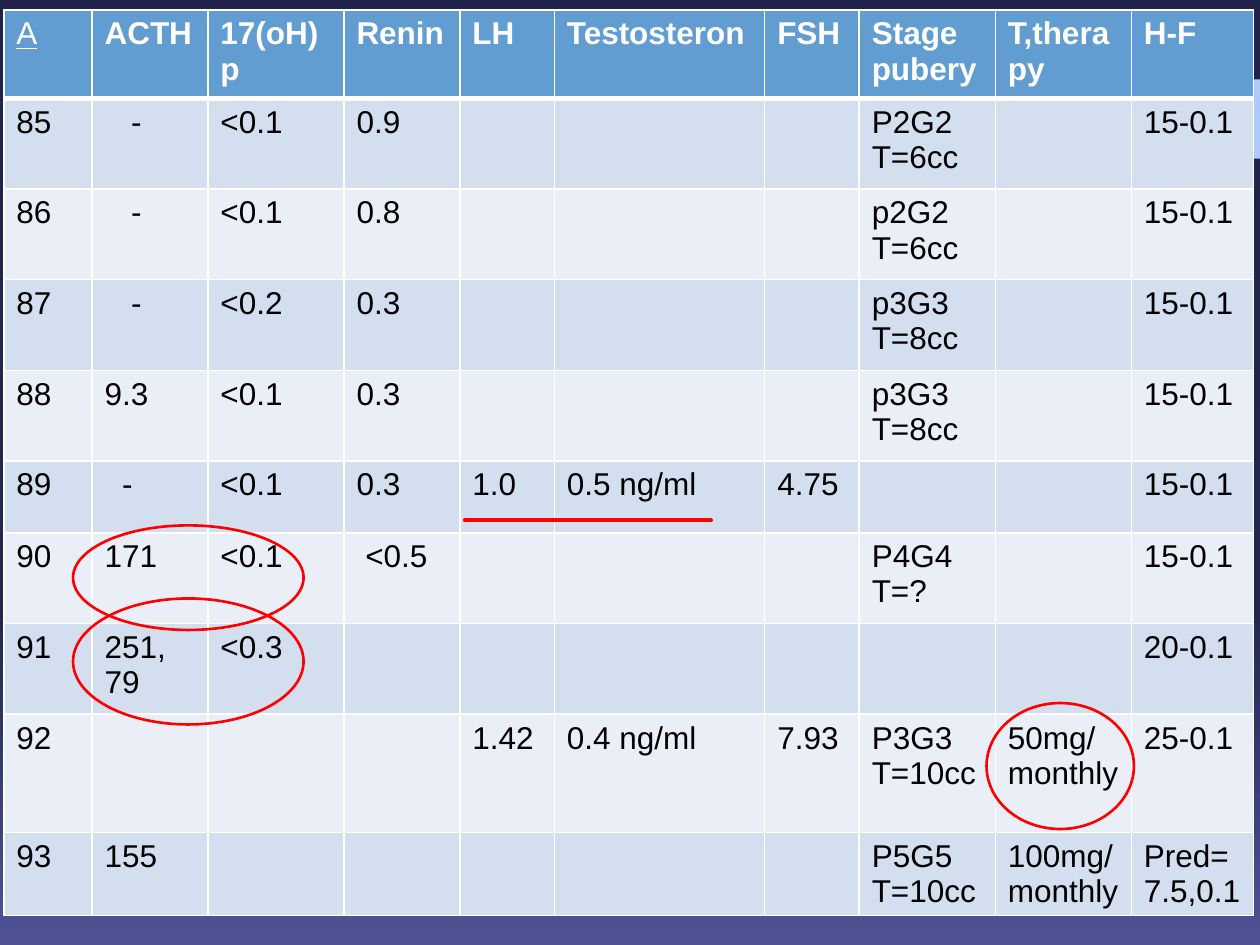
from copy import deepcopy

from lxml.etree import SubElement
from pptx import Presentation
from pptx.dml.color import RGBColor
from pptx.enum.shapes import MSO_SHAPE
from pptx.oxml.ns import qn
from pptx.util import Inches, Pt

FONT = "Arial"
WHITE, BLACK, RED = "FFFFFF", "000000", "FF0000"
HEADER_BLUE, BAND_DARK, BAND_LIGHT = "629DD1", "D3DFEE", "EAEFF7"
ACCENT = "ACCBF9"
BACKGROUND_STOPS = [(0, "21244A"), (0.65, "232750"), (1, "4F5395")]

COLUMN_WIDTHS = [0.7, 0.92, 1.08, 0.92, 0.75, 1.67, 0.75, 1.08, 1.08, 0.97]
ROW_HEIGHTS = [0.7, 0.72, 0.72, 0.72, 0.72, 0.57, 0.72, 0.72, 0.94, 0.66]
LAB_RESULTS = [
    ["A", "ACTH", "17(oH)p", "Renin", "LH", "Testosteron", "FSH", "Stage\npubery", "T,therapy", "H-F"],
    ["85", "-", "<0.1", "0.9", "", "", "", "P2G2\nT=6cc", "", "15-0.1"],
    ["86", "-", "<0.1", "0.8", "", "", "", "p2G2\nT=6cc", "", "15-0.1"],
    ["87", "-", "<0.2", "0.3", "", "", "", "p3G3\nT=8cc", "", "15-0.1"],
    ["88", "9.3", "<0.1", "0.3", "", "", "", "p3G3\nT=8cc", "", "15-0.1"],
    ["89", "-", "<0.1", "0.3", "1.0", "0.5 ng/ml", "4.75", "", "", "15-0.1"],
    ["90", "171", "<0.1", "<0.5", "", "", "", "P4G4\nT=?", "", "15-0.1"],
    ["91", "251,\n79", "<0.3", "", "", "", "", "", "", "20-0.1"],
    ["92", "", "", "", "1.42", "0.4 ng/ml", "7.93", "P3G3\nT=10cc", "50mg/monthly", "25-0.1"],
    ["93", "155", "", "", "", "", "", "P5G5\nT=10cc", "100mg/monthly", "Pred=7.5,0.1"],
]
# (row, column): left indent in inches
INDENTS = {(1, 1): 0.21, (2, 1): 0.21, (3, 1): 0.21, (5, 1): 0.14, (6, 3): 0.07}

# Positions relative to the table's top left corner
CIRCLED_RESULTS = [(0.55, 4.09, 1.83, 0.83), (0.55, 4.67, 1.83, 1), (7.8, 5.5, 1.17, 1)]
UNDERLINED_RESULTS = (3.3, 3.84, 2.67, 0.42)


def color(hex_value):
    return RGBColor.from_string(hex_value)


def paint_background(slide):
    fill = slide.background.fill
    fill.gradient()
    fill.gradient_angle = 270
    stop_list = slide.element.xpath(".//a:gsLst")[0]
    stop_list.append(deepcopy(stop_list[-1]))
    for stop, (position, hex_value) in zip(fill.gradient_stops, BACKGROUND_STOPS):
        stop.position = position
        stop.color.rgb = color(hex_value)


def add_shape(slide, kind, box, fill=None, line=None):
    shape = slide.shapes.add_shape(kind, *(Inches(length) for length in box))
    shape.shadow.inherit = False
    if fill:
        shape.fill.solid()
        shape.fill.fore_color.rgb = color(fill)
    else:
        shape.fill.background()
    if line:
        shape.line.color.rgb = color(line)
        shape.line.width = Pt(1.5)
    else:
        shape.line.fill.background()
    return shape


def set_borders(cell, bottom_width):
    properties = cell._tc.get_or_add_tcPr()
    for side in ("L", "R", "T", "B"):
        width = bottom_width if side == "B" else 1
        border = SubElement(properties, qn(f"a:ln{side}"), w=str(Pt(width)))
        fill = SubElement(border, qn("a:solidFill"))
        SubElement(fill, qn("a:srgbClr"), val=WHITE)


def write_cell(cell, text, is_header, is_age, indent):
    for index, line in enumerate(text.split("\n") if text else []):
        frame = cell.text_frame
        paragraph = frame.add_paragraph() if index else frame.paragraphs[0]
        if indent:
            paragraph._p.get_or_add_pPr().set("marL", str(Inches(indent)))
        run = paragraph.add_run()
        run.text = line
        run.font.name = FONT
        run.font.size = Pt(18)
        run.font.bold = is_header and not is_age
        run.font.underline = is_header and is_age
        run.font.color.rgb = color(WHITE if is_header else BLACK)


def add_results_table(slide, left, top):
    table = slide.shapes.add_table(
        len(ROW_HEIGHTS), len(COLUMN_WIDTHS), Inches(left), Inches(top),
        Inches(sum(COLUMN_WIDTHS)), Inches(sum(ROW_HEIGHTS))).table
    for column, width in zip(table.columns, COLUMN_WIDTHS):
        column.width = Inches(width)
    for row, height in zip(table.rows, ROW_HEIGHTS):
        row.height = Inches(height)
    for r, values in enumerate(LAB_RESULTS):
        band = BAND_DARK if r % 2 else BAND_LIGHT
        for c, text in enumerate(values):
            cell = table.cell(r, c)
            set_borders(cell, 3 if r == 0 else 1)
            cell.fill.solid()
            cell.fill.fore_color.rgb = color(band if r else HEADER_BLUE)
            write_cell(cell, text, r == 0, c == 0, INDENTS.get((r, c)))


def add_highlights(slide, left, top):
    def place(box):
        x, y, width, height = box
        return left + x, top + y, width, height

    for box in CIRCLED_RESULTS:
        add_shape(slide, MSO_SHAPE.OVAL, place(box), line=RED)
    underline = add_shape(slide, MSO_SHAPE.MATH_MINUS, place(UNDERLINED_RESULTS),
                          fill=HEADER_BLUE, line=RED)
    underline.adjustments[0] = 0.029


def main():
    presentation = Presentation()
    presentation.slide_width = Inches(10)
    presentation.slide_height = Inches(7.5)
    slide = presentation.slides.add_slide(presentation.slide_layouts[6])
    paint_background(slide)
    add_shape(slide, MSO_SHAPE.RECTANGLE, (9.37, 0.63, 0.63, 0.63), fill=ACCENT)
    left, top = 0.03, 0.08
    add_results_table(slide, left, top)
    add_highlights(slide, left, top)
    presentation.save("out.pptx")


if __name__ == "__main__":
    main()
